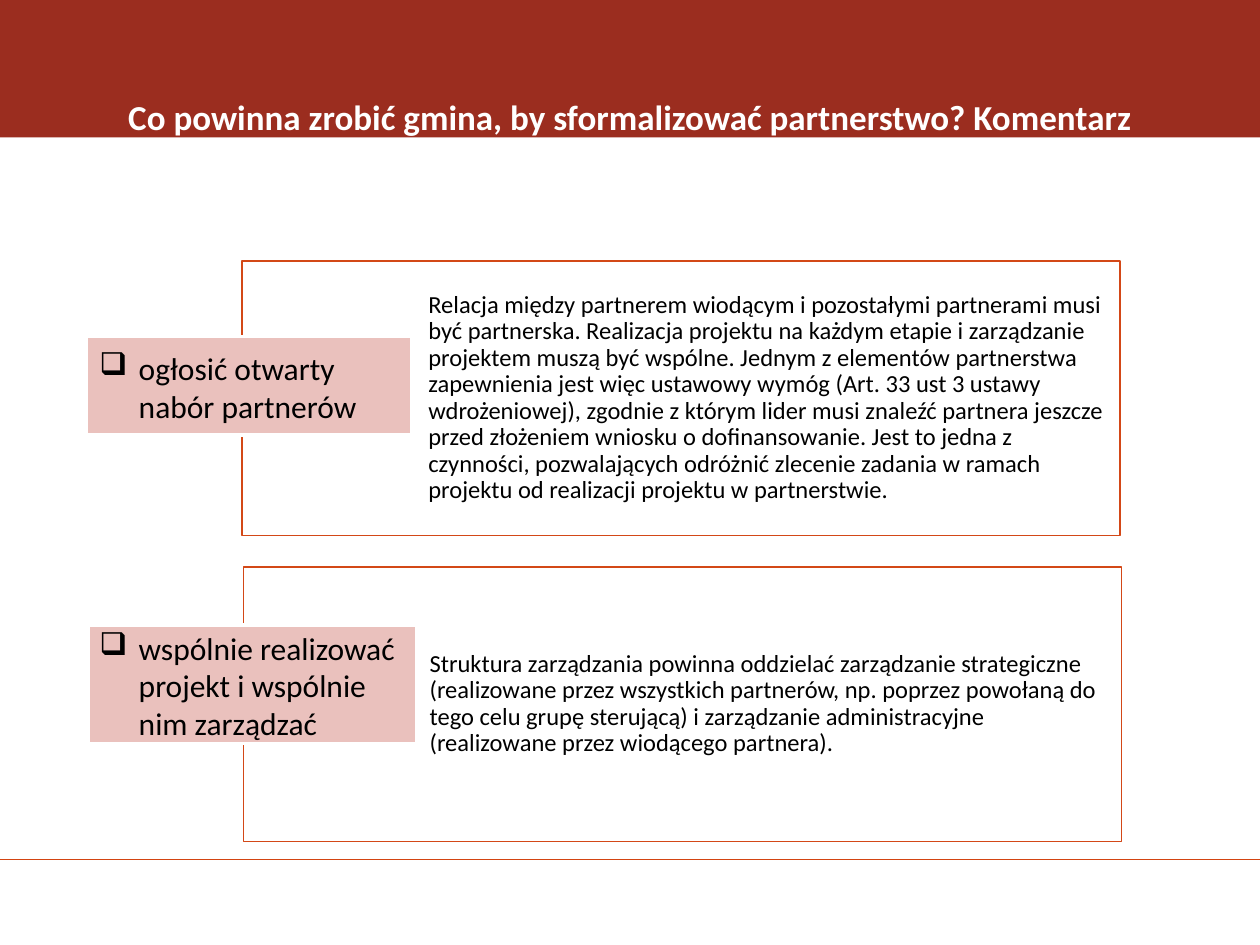
import dataclasses
import typing

import lxml.etree
import pptx
import pptx.dml.color
import pptx.enum.shapes
import pptx.enum.text
import pptx.oxml.ns
import pptx.util

Pt = pptx.util.Pt
Anchor = pptx.enum.text.MSO_ANCHOR
Align = pptx.enum.text.PP_ALIGN
Fit = pptx.enum.text.MSO_AUTO_SIZE
qn = pptx.oxml.ns.qn

HUES = {
    "band": "9B2D1F",
    "rule": "D34412",
    "edge": "D34817",
    "label": "EAC1BD",
    "white": "FFFFFF",
    "black": "000000",
}
TITLE = {"size": Pt(20), "bold": True}
BODY = {"size": Pt(14)}
LABEL = {"size": Pt(18)}
INSET = {
    "margin_left": Pt(106.5),
    "margin_top": Pt(4.3),
    "margin_right": Pt(4.3),
    "margin_bottom": Pt(4.3),
}
INDENT = Pt(22.5)


@dataclasses.dataclass
class Box:
    left: float
    top: float
    width: float
    height: float

    def place(self) -> list:
        return [Pt(n) for n in (self.left, self.top, self.width, self.height)]


@dataclasses.dataclass
class Panel:
    frame: Box
    tag: Box
    note: Box
    label: str
    body: str


PANELS = [
    Panel(
        Box(138.3, 149.1, 501.8, 156.8),
        Box(49.5, 192.2, 185.7, 56.3),
        Box(49.7, 195.8, 188.6, 51),
        "ogłosić otwarty nabór partnerów",
        "Relacja między partnerem wiodącym i pozostałymi partnerami musi być "
        "partnerska. Realizacja projektu na każdym etapie i zarządzanie projektem "
        "muszą być wspólne. Jednym z elementów partnerstwa zapewnienia jest więc "
        "ustawowy wymóg (Art. 33 ust 3 ustawy wdrożeniowej), zgodnie z którym lider "
        "musi znaleźć partnera jeszcze przed złożeniem wniosku o dofinansowanie. "
        "Jest to jedna z czynności, pozwalających odróżnić zlecenie zadania w ramach "
        "projektu od realizacji projektu w partnerstwie.",
    ),
    Panel(
        Box(139, 324, 501.8, 156.8),
        Box(50.4, 357.1, 187.9, 67.7),
        Box(49.7, 355.7, 188.6, 72.7),
        "wspólnie realizować projekt i wspólnie nim zarządzać",
        "Struktura zarządzania powinna oddzielać zarządzanie strategiczne "
        "(realizowane przez wszystkich partnerów, np. poprzez powołaną do tego celu "
        "grupę sterującą) i zarządzanie administracyjne (realizowane przez wiodącego "
        "partnera).",
    ),
]


def style(item: typing.Any, form: dict) -> None:
    for key, value in form.items():
        setattr(item, key, value)


def tint(key: str) -> pptx.dml.color.RGBColor:
    return pptx.dml.color.RGBColor.from_string(HUES[key])


def draw_rect(slide: typing.Any, box: Box, fill: str, edge: str = "", width: float = 0) -> typing.Any:
    kind = pptx.enum.shapes.MSO_SHAPE.RECTANGLE
    shape = slide.shapes.add_shape(kind, *box.place())
    shape.shadow.inherit = False
    shape.fill.solid()
    shape.fill.fore_color.rgb = tint(fill)
    if edge:
        shape.line.color.rgb = tint(edge)
        shape.line.width = Pt(width)
    else:
        shape.line.fill.background()
    return shape


def draw_rule(slide: typing.Any, top: float) -> None:
    kind = pptx.enum.shapes.MSO_CONNECTOR.STRAIGHT
    rule = slide.shapes.add_connector(kind, Pt(0), Pt(top), Pt(720), Pt(top))
    rule.line.color.rgb = tint("rule")
    rule.line.width = Pt(0.75)
    lxml.etree.SubElement(rule.line._get_or_add_ln().getparent(), qn("a:effectLst"))


def write(shape: typing.Any, text: str, hue: str, font: dict, frame: dict, para: dict) -> typing.Any:
    style(shape.text_frame, {"word_wrap": True, **frame})
    line = shape.text_frame.paragraphs[0]
    style(line, para)
    run = line.add_run()
    run.text = text
    style(run.font, {"name": "Calibri", **font})
    run.font.color.rgb = tint(hue)
    return line


def add_mark(line: typing.Any) -> None:
    props = line._p.get_or_add_pPr()
    props.set("marL", str(INDENT))
    props.set("indent", str(-INDENT))
    lxml.etree.SubElement(props, qn("a:buChar")).set("char", "❑")


def draw_panel(slide: typing.Any, panel: Panel) -> None:
    frame = draw_rect(slide, panel.frame, "white", "edge", 0.75)
    write(
        frame, panel.body, "black", BODY,
        {"vertical_anchor": Anchor.MIDDLE, **INSET},
        {"alignment": Align.LEFT, "line_spacing": 0.9},
    )
    draw_rect(slide, panel.tag, "label", "white", 2)
    note = slide.shapes.add_textbox(*panel.note.place())
    line = write(note, panel.label, "black", LABEL, {"auto_size": Fit.SHAPE_TO_FIT_TEXT}, {})
    add_mark(line)


def main() -> None:
    deck = pptx.Presentation()
    style(deck, {"slide_width": Pt(720), "slide_height": Pt(540)})
    slide = deck.slides.add_slide(deck.slide_layouts[6])
    draw_rule(slide, 491)
    draw_rect(slide, Box(0, -0.7, 720, 79.2), "band")
    title = slide.shapes.add_textbox(*Box(36, 21.6, 648, 90).place())
    write(
        title, "Co powinna zrobić gmina, by sformalizować partnerstwo? Komentarz",
        "white", TITLE, {"vertical_anchor": Anchor.MIDDLE}, {"alignment": Align.CENTER},
    )
    for panel in PANELS:
        draw_panel(slide, panel)
    deck.save("out.pptx")


if __name__ == "__main__":
    main()
